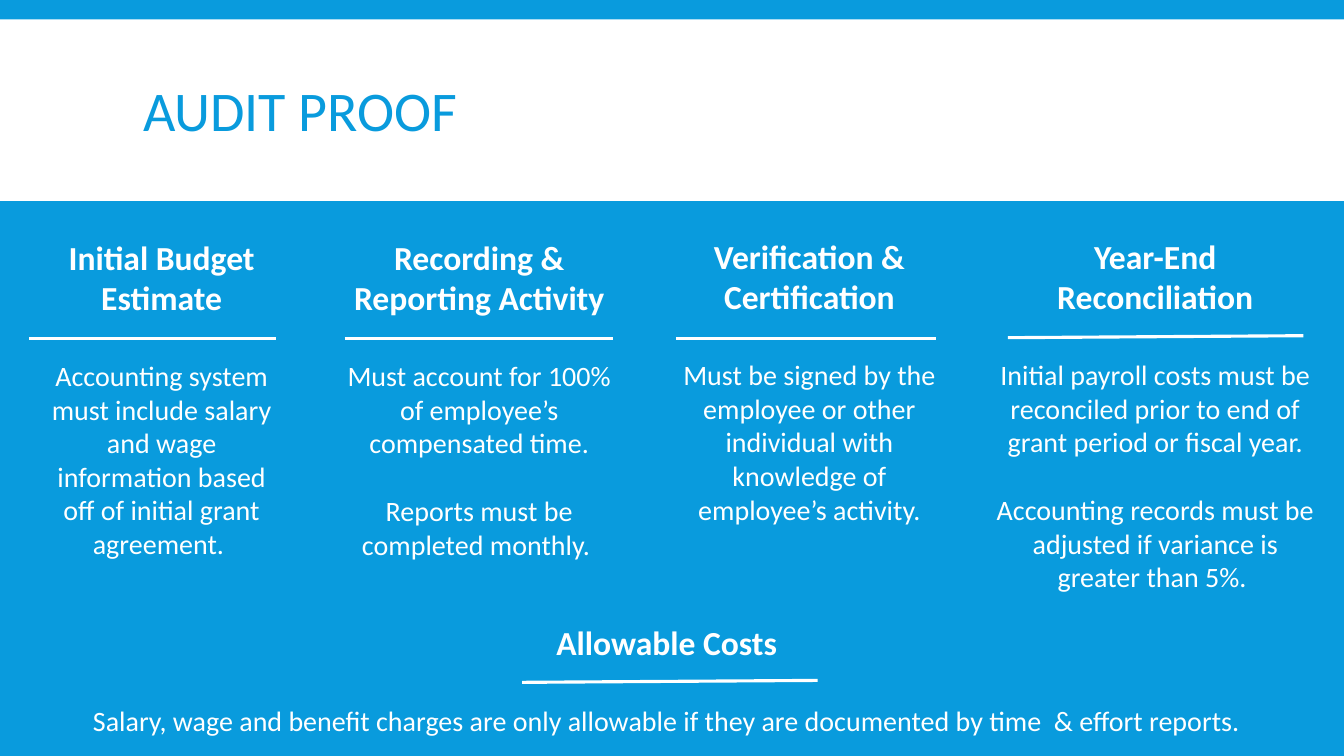
from lxml import etree
from pptx import Presentation
from pptx import util as u
from pptx.dml.color import RGBColor
from pptx.enum import shapes, text
from pptx.oxml.ns import qn

COLORS = {"blue": "099BDD", "white": "FFFFFF"}
FONT = "Calibri"
HEADING_SIZE, BODY_SIZE = 24, 20
LINE_HEIGHT = 1.22  # line height of the font relative to its size

# heading, body paragraphs, text box (left, top, width, height), rule (x1, y1, x2, y2)
SECTIONS = [
    ("Initial Budget Estimate",
     ["Accounting system must include salary and wage information based off of "
      "initial grant agreement. "],
     (23, 165.6, 185, 240), (21, 242, 197.3, 242)),
    ("Recording & Reporting Activity",
     ["Must account for 100% of employee’s compensated time.",
      "Reports must be completed monthly. "],
     (233.3, 165.6, 218, 240), (246.2, 242, 437.8, 242)),
    ("Verification & Certification",
     ["Must be signed by the employee or other individual with knowledge of "
      "employee’s activity."],
     (480.2, 165, 196, 216), (483.1, 242, 668.9, 242)),
    ("Year-End Reconciliation",
     ["Initial payroll costs must be reconciled prior to end of grant period or "
      "fiscal year.",
      "Accounting records must be adjusted if variance is greater than 5%. "],
     (702.7, 165, 245, 264), (720, 241.2, 931, 239.8)),
    ("Allowable Costs",
     ["Salary, wage and benefit charges are only allowable if they are documented "
      "by time  & effort reports."],
     (36.7, 440.6, 879, 90), (373, 487.4, 584, 486)),
]


def rgb(name):
    return RGBColor.from_string(COLORS[name])


def format_text(paragraph, size, color, bold=False):
    for run in paragraph.runs:
        run.font.name = FONT
        run.font.size = u.Pt(size)
        run.font.bold = bold
        run.font.color.rgb = rgb(color)


def add_header(slide, left, top, width, height):
    """Place the white band and the slide title inside it."""
    band = slide.shapes.add_shape(
        shapes.MSO_SHAPE.RECTANGLE, *map(u.Pt, (left, top, width, height)))
    band.shadow.inherit = False
    band.fill.solid()
    band.fill.fore_color.rgb = rgb("white")
    band.line.fill.background()

    title = slide.shapes.title
    title.element.addprevious(band.element)  # band lies behind the title
    title.left, title.top = u.Pt(left + 95), u.Pt(top + 8.4)
    title.width, title.height = u.Pt(770), u.Pt(119)
    frame = title.text_frame
    frame.text = "AUDIT PROOF"
    frame.vertical_anchor = text.MSO_ANCHOR.MIDDLE
    paragraph = frame.paragraphs[0]
    paragraph.alignment = text.PP_ALIGN.LEFT
    paragraph.line_spacing = 0.85
    format_text(paragraph, 40, "blue")


def add_rule(slide, x1, y1, x2, y2):
    rule = slide.shapes.add_connector(
        shapes.MSO_CONNECTOR.STRAIGHT, *map(u.Pt, (x1, y1, x2, y2)))
    rule.line.color.rgb = rgb("white")
    rule.line.width = u.Pt(2.25)
    etree.SubElement(rule.element.spPr, qn("a:effectLst"))


def add_section(slide, heading, body, box, rule):
    """Place a bold heading, its body paragraphs and the rule between them."""
    frame = slide.shapes.add_textbox(*map(u.Pt, box)).text_frame
    frame.word_wrap = True
    frame.auto_size = text.MSO_AUTO_SIZE.SHAPE_TO_FIT_TEXT
    frame.text = "\n".join([heading, *body])
    gap_size = HEADING_SIZE
    for index, paragraph in enumerate(frame.paragraphs):
        paragraph.alignment = text.PP_ALIGN.CENTER
        if index == 0:
            format_text(paragraph, HEADING_SIZE, "white", bold=True)
        else:
            paragraph.space_before = u.Pt(round(gap_size * LINE_HEIGHT, 1))
            format_text(paragraph, BODY_SIZE, "white")
            gap_size = BODY_SIZE
    add_rule(slide, *rule)


def main():
    presentation = Presentation()
    presentation.slide_width, presentation.slide_height = u.Pt(960), u.Pt(540)
    slide = presentation.slides.add_slide(presentation.slide_layouts[5])
    slide.background.fill.solid()
    slide.background.fill.fore_color.rgb = rgb("blue")

    add_header(slide, 0, 13.9, 960, 129.6)
    for section in SECTIONS:
        add_section(slide, *section)
    presentation.save("out.pptx")


if __name__ == "__main__":
    main()
